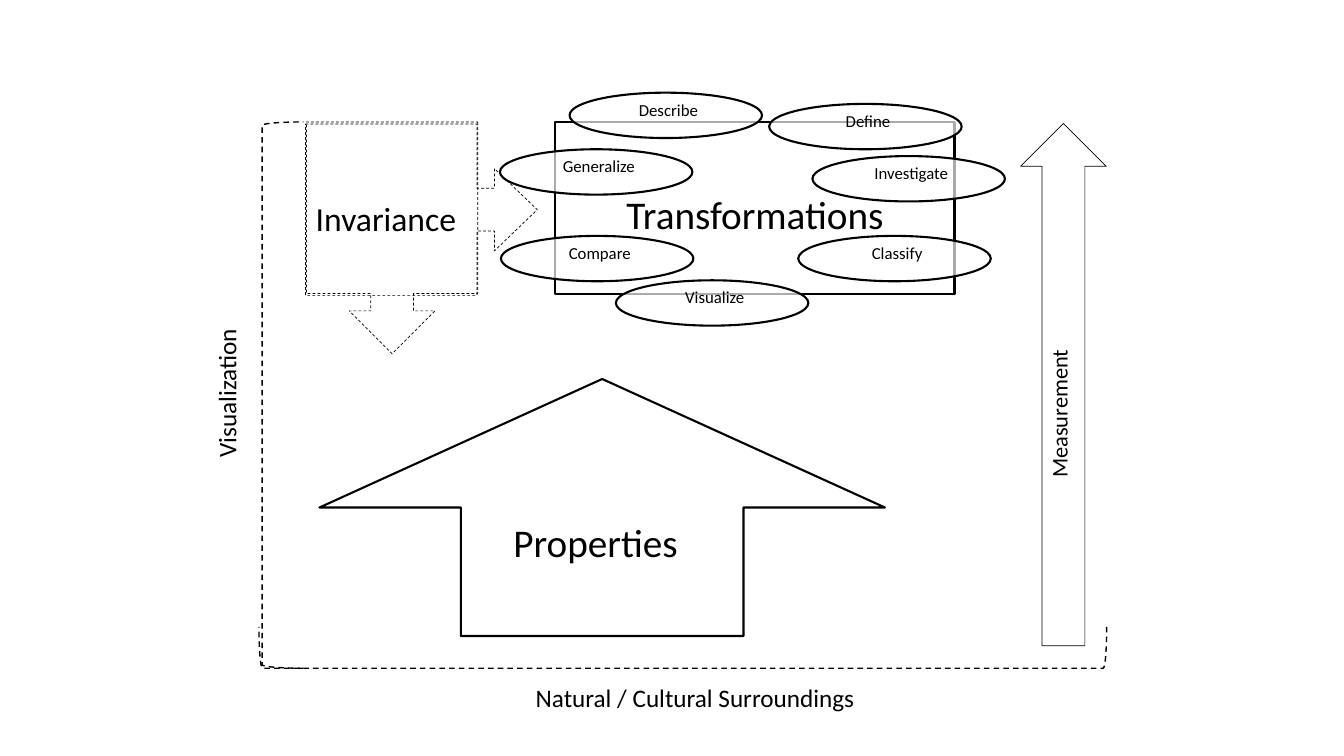
from lxml.etree import SubElement
from pptx import Presentation
from pptx.dml.color import RGBColor
from pptx.enum.dml import MSO_LINE
from pptx.enum.shapes import MSO_SHAPE
from pptx.enum.text import MSO_AUTO_SIZE, PP_ALIGN
from pptx.oxml.ns import qn
from pptx.util import Pt

BLACK = "000000"
WHITE = "FFFFFF"


def add_label(parent, wording, box, size, rotation=0):
    """Add a centred Calibri label; box is left, top, width, height in points."""
    label = parent.shapes.add_textbox(*map(Pt, box))
    label.rotation = rotation
    frame = label.text_frame
    frame.word_wrap = True
    frame.auto_size = MSO_AUTO_SIZE.SHAPE_TO_FIT_TEXT
    paragraph = frame.paragraphs[0]
    paragraph.alignment = PP_ALIGN.CENTER
    run = paragraph.add_run()
    run.text = wording
    run.font.name = "Calibri"
    run.font.size = Pt(size)
    run.font.color.rgb = RGBColor.from_string(BLACK)


def add_outline(parent, kind, box, weight, rotation=0, dashed=False, adjust=()):
    """Add an unfilled, black-lined preset shape and return it."""
    outline = parent.shapes.add_shape(kind, *map(Pt, box))
    outline.rotation = rotation
    outline.shadow.inherit = False
    outline.fill.background()
    outline.line.color.rgb = RGBColor.from_string(BLACK)
    outline.line.width = Pt(weight)
    if dashed:
        outline.line.dash_style = MSO_LINE.DASH
    for index, value in enumerate(adjust):
        outline.adjustments[index] = value
    return outline


deck = Presentation()
deck.slide_width, deck.slide_height = Pt(960), Pt(540)
slide = deck.slides.add_slide(deck.slide_layouts[6])

add_label(slide, "Natural / Cultural Surroundings", (187.2, 483.8, 618.5, 28.8), 18)

measurement = slide.shapes.add_group_shape()
add_label(measurement, "Measurement", (645.1, 282.2, 222.5, 26.6), 16, 270)
add_outline(measurement, MSO_SHAPE.RIGHT_ARROW, (573.1, 244.1, 373, 61.2), 0.5, 270)

# Invariance points right to the transformations and down to the properties
add_label(slide, "Invariance", (177.8, 138.2, 195.8, 36), 24)
for left, top, rotation, head_width in ((218.2, 88.6, 0, 0.24), (197.3, 108.7, 90, 0.25)):
    add_outline(slide, MSO_SHAPE.RIGHT_ARROW_CALLOUT, (left, top, 165.6, 122.4),
                0.5, rotation, True, (0.25, head_width, 0.25, 0.74))

add_label(slide, "Visualization", (59.8, 266.4, 203.8, 28.8), 18, 270)
for box, rotation in (((187.2, 87.1, 29.5, 390.2), 0), ((473, 159.8, 29.5, 605.5), 270)):
    add_outline(slide, MSO_SHAPE.LEFT_BRACKET, box, 1, rotation, True)

properties = slide.shapes.add_group_shape()
add_outline(properties, MSO_SHAPE.UP_ARROW, (228.2, 270.7, 403.9, 183.6), 1.5)
add_label(properties, " Properties", (347.8, 366.5, 149, 41), 28)

transformations = slide.shapes.add_group_shape()
add_label(transformations, "Transformations", (396.7, 132.5, 285.1, 41), 28)
add_outline(transformations, MSO_SHAPE.RECTANGLE, (396.7, 87.1, 285.1, 123.1), 1.5)

# Translucent process ovals around the box, clear of its heading
processes = (
    ("Describe", 406.8, 66.2),
    ("Define", 549.4, 74.2),
    ("Classify", 570.2, 168.5),
    ("Compare", 357.8, 168.5),
    ("Investigate", 580.3, 111.5),
    ("Generalize", 357.1, 106.6),
    ("Visualize", 439.9, 200.2),
)
for process, left, top in processes:
    pair = slide.shapes.add_group_shape()
    oval = add_outline(pair, MSO_SHAPE.OVAL, (left, top, 137.5, 32.4), 1.5)
    oval.fill.solid()
    oval.fill.fore_color.rgb = RGBColor.from_string(WHITE)
    fill_color = oval.element.spPr.find(qn("a:solidFill")).find(qn("a:srgbClr"))
    SubElement(fill_color, qn("a:alpha")).set("val", "67000")
    add_label(pair, process, (left + 10.9, top + 1.4, 119.5, 20.2), 12)

deck.save("out.pptx")
